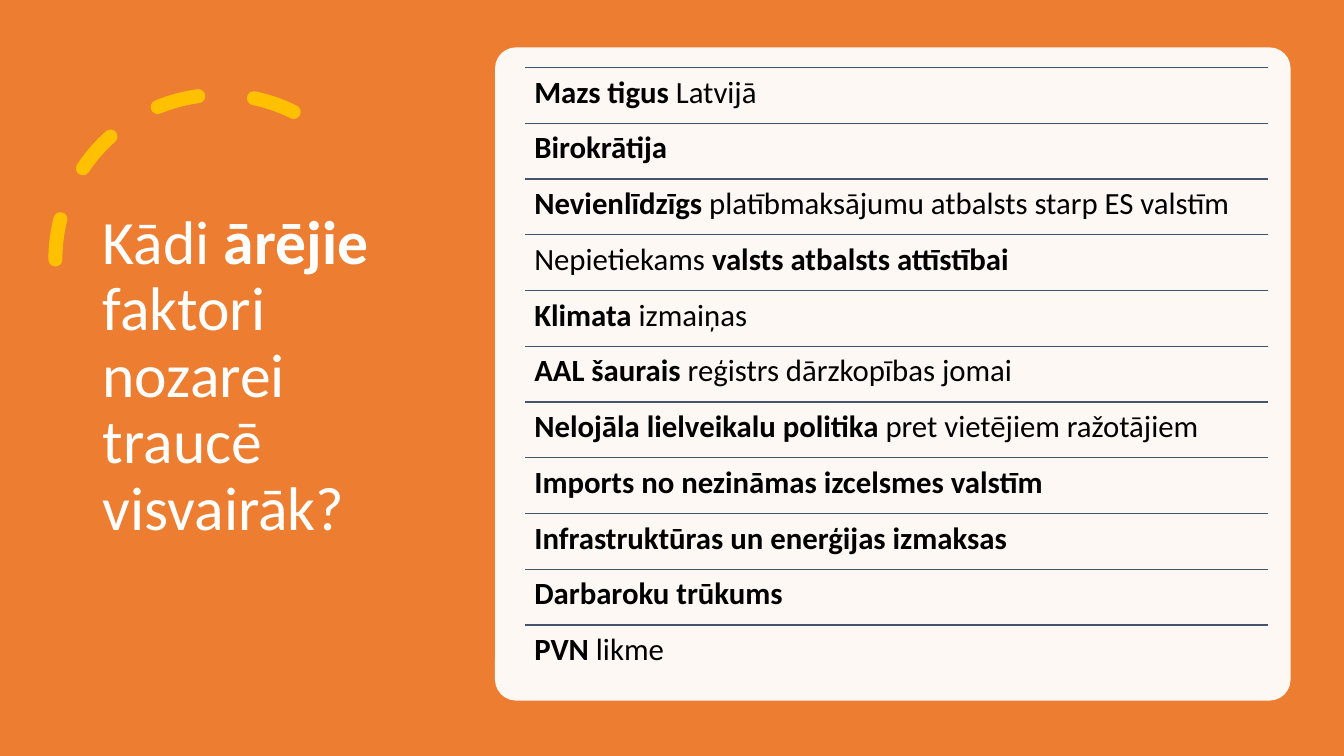
from pptx import Presentation
from pptx.dml.color import RGBColor
from pptx.enum.dml import MSO_LINE
from pptx.enum.shapes import MSO_CONNECTOR, MSO_SHAPE
from pptx.enum.text import MSO_ANCHOR
from pptx.oxml.ns import qn
from pptx.util import Inches, Pt
from lxml import etree

DASH = MSO_LINE.DASH
STRAIGHT = MSO_CONNECTOR.STRAIGHT
ARC, RECTANGLE, ROUNDED = MSO_SHAPE.ARC, MSO_SHAPE.RECTANGLE, MSO_SHAPE.ROUNDED_RECTANGLE
MIDDLE, TOP = MSO_ANCHOR.MIDDLE, MSO_ANCHOR.TOP

FONT = "Calibri"
ORANGE, YELLOW, WHITE, BLACK, SLATE = "ED7D31", "FFC000", "FFFFFF", "000000", "44546A"

ROW_LEFT, ROW_TOP, ROW_WIDTH, ROW_STEP = 5.21, 0.67, 7.37, 0.553

TITLE = [("Kādi ", False), ("ārējie", True), (" faktori nozarei traucē visvairāk?", False)]
FACTORS = [
    [("Mazs tigus ", True), ("Latvijā", False)],
    [("Birokrātija", True)],
    [("Nevienlīdzīgs ", True), ("platībmaksājumu atbalsts starp ES valstīm", False)],
    [("Nepietiekams ", False), ("valsts atbalsts attīstībai", True)],
    [("Klimata", True), (" izmaiņas", False)],
    [("AAL šaurais ", True), ("reģistrs dārzkopības jomai", False)],
    [("Nelojāla lielveikalu politika ", True), ("pret vietējiem ražotājiem", False)],
    [("Imports no nezināmas izcelsmes valstīm", True)],
    [("Infrastruktūras un enerģijas izmaksas", True)],
    [("Darbaroku trūkums", True)],
    [("PVN ", True), ("likme", False)],
]


def color(value):
    return RGBColor.from_string(value)


def add_panel(page, kind, left, top, width, height, fill):
    panel = page.shapes.add_shape(kind, Inches(left), Inches(top), Inches(width), Inches(height))
    panel.shadow.inherit = False
    panel.fill.solid()
    panel.fill.fore_color.rgb = color(fill)
    panel.line.fill.background()
    return panel


def set_opacity(shape, percent):
    fill_color = shape._element.spPr.find(qn("a:solidFill")).find(qn("a:srgbClr"))
    etree.SubElement(fill_color, qn("a:alpha")).set("val", str(percent * 1000))


def add_dashed_arc(page, left, top, size):
    """Draw a thick round-capped arc, mirrored to curve over the left side."""
    arc = page.shapes.add_shape(ARC, Inches(left), Inches(top), Inches(size), Inches(size))
    arc.shadow.inherit = False
    arc.adjustments[0] = 146.129
    arc.adjustments[1] = 0
    arc.fill.background()
    arc.line.color.rgb = color(YELLOW)
    arc.line.width = Pt(10)
    arc.line.dash_style = DASH
    properties = arc._element.spPr
    properties.find(qn("a:xfrm")).set("flipH", "1")
    properties.find(qn("a:ln")).set("cap", "rnd")


def add_rule(page, left, top, width):
    rule = page.shapes.add_connector(
        STRAIGHT, Inches(left), Inches(top), Inches(left + width), Inches(top))
    rule.line.color.rgb = color(SLATE)
    rule.line.width = Pt(1)
    etree.SubElement(rule._element.spPr, qn("a:effectLst"))


def add_text(page, left, top, width, height, spans, size, ink, anchor, inset):
    """Add one paragraph built from (text, bold) spans."""
    box = page.shapes.add_textbox(Inches(left), Inches(top), Inches(width), Inches(height))
    frame = box.text_frame
    frame.word_wrap = True
    frame.vertical_anchor = anchor
    frame.margin_left = frame.margin_right = Inches(inset)
    frame.margin_top = frame.margin_bottom = Inches(inset)
    para = frame.paragraphs[0]
    para.line_spacing = 0.9
    for text, bold in spans:
        span = para.add_run()
        span.text = text
        span.font.name = FONT
        span.font.size = Pt(size)
        span.font.bold = bold
        span.font.color.rgb = color(ink)


def main():
    deck = Presentation()
    deck.slide_width, deck.slide_height = Inches(13.33), Inches(7.5)
    page = deck.slides.add_slide(deck.slide_layouts[6])

    add_panel(page, RECTANGLE, 0, 0, 13.33, 7.5, ORANGE)
    add_dashed_arc(page, 0.55, 0.94, 3.27)
    add_text(page, 0.92, 0.7, 3.23, 6.09, TITLE, 44, WHITE, MIDDLE, 0.1)

    card = add_panel(page, ROUNDED, 4.91, 0.47, 7.89, 6.48, WHITE)
    card.adjustments[0] = 0.032
    set_opacity(card, 95)

    for index, spans in enumerate(FACTORS):
        top = ROW_TOP + index * ROW_STEP
        add_rule(page, ROW_LEFT, top, ROW_WIDTH)
        add_text(page, ROW_LEFT, top, ROW_WIDTH, ROW_STEP, spans, 22, BLACK, TOP, 0.09)

    deck.save("out.pptx")


if __name__ == "__main__":
    main()
